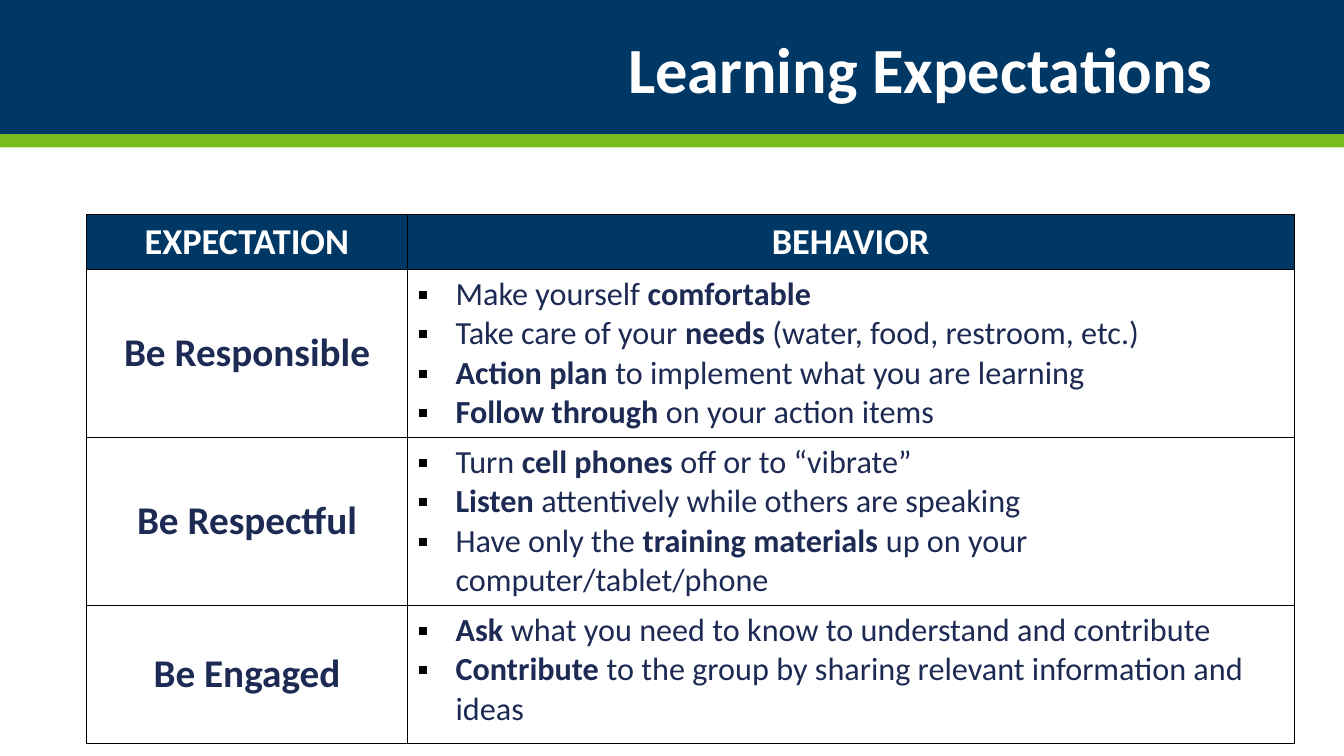
from lxml.etree import SubElement
from pptx import Presentation
from pptx.dml.color import RGBColor
from pptx.enum.shapes import MSO_SHAPE as Shape
from pptx.enum.text import MSO_ANCHOR as Anchor, PP_ALIGN as Align
from pptx.oxml import parse_xml
from pptx.oxml.ns import nsdecls, qn
from pptx.util import Inches, Pt

COLORS = {
    "navy": "003865",
    "green": "78BE21",
    "ink": "1D2A53",
    "white": "FFFFFF",
    "black": "000000",
}

EXPECTATIONS = {
    "Be Responsible": [
        "Make yourself **comfortable**",
        "Take care of your **needs** (water, food, restroom, etc.)",
        "**Action plan** to implement what you are learning",
        "**Follow through** on your action items",
    ],
    "Be Respectful": [
        "Turn **cell phones** off or to “vibrate”",
        "**Listen** attentively while others are speaking",
        "Have only the **training materials** up on your computer/tablet/phone",
    ],
    "Be Engaged": [
        "**Ask** what you need to know to understand and contribute",
        "**Contribute** to the group by sharing relevant information and ideas",
    ],
}


def color(name):
    return RGBColor.from_string(COLORS[name])


def write(frame, lines, size, ink, align=Align.LEFT, margin=0.38, indent=-0.38,
          bullet=None, spacing=None):
    for number, line in enumerate(lines):
        paragraph = frame.add_paragraph() if number else frame.paragraphs[0]
        paragraph.alignment = align
        if spacing:
            paragraph.line_spacing = spacing
        props = paragraph._p.get_or_add_pPr()
        props.set("marL", str(Inches(margin)))
        props.set("indent", str(Inches(indent)))
        if bullet:
            tint = SubElement(props, qn("a:buClr"))
            SubElement(tint, qn("a:srgbClr"), val=COLORS["black"])
            SubElement(props, qn("a:buFont"), typeface="Wingdings" if bullet == "§" else "Arial")
            SubElement(props, qn("a:buChar"), char=bullet)
        for part, text in enumerate(line.split("**")):
            if text:
                run = paragraph.add_run()
                run.text = text
                run.font.name = "Calibri"
                run.font.size = Pt(size)
                run.font.bold = part % 2 == 1
                run.font.color.rgb = color(ink)


class GridSlide:
    def __init__(self, deck, columns=100, rows=100):
        self.slide = deck.slides.add_slide(deck.slide_layouts[6])
        self.column = deck.slide_width / columns
        self.row = deck.slide_height / rows

    def place(self, left, top, width, height):
        return (round(left * self.column), round(top * self.row),
                round(width * self.column), round(height * self.row))

    def band(self, top, height, fill):
        band = self.slide.shapes.add_shape(Shape.RECTANGLE, *self.place(0, top, 100, height))
        band.shadow.inherit = False
        band.fill.solid()
        band.fill.fore_color.rgb = color(fill)
        band.line.fill.background()

    def title(self, text, *area):
        frame = self.slide.shapes.add_textbox(*self.place(*area)).text_frame
        frame.word_wrap = True
        frame.vertical_anchor = Anchor.MIDDLE
        write(frame, [f"**{text}**"], 46, "white", Align.CENTER, margin=4.5, indent=0.5,
              spacing=0.9)

    def cell(self, cell, lines, fill="white", anchor=Anchor.TOP, **style):
        cell.vertical_anchor = anchor
        cell.fill.solid()
        cell.fill.fore_color.rgb = color(fill)
        for position, side in enumerate("LRTB"):
            cell._tc.get_or_add_tcPr().insert(position, parse_xml(
                f'<a:ln{side} {nsdecls("a")} w="{Pt(1)}"><a:solidFill>'
                f'<a:srgbClr val="{COLORS["black"]}"/></a:solidFill></a:ln{side}>'))
        write(cell.text_frame, lines, **style)

    def table(self, left, top, widths, heights, headings, body):
        table = self.slide.shapes.add_table(
            len(heights), len(widths),
            *self.place(left, top, sum(widths), sum(heights))).table
        for column, width in zip(table.columns, widths):
            column.width = round(width * self.column)
        for row, height in zip(table.rows, heights):
            row.height = round(height * self.row)
        for number, heading in enumerate(headings):
            self.cell(table.cell(0, number), [f"**{heading}**"], "navy",
                      size=26, ink="white", align=Align.CENTER)
        for number, (expectation, behaviors) in enumerate(body.items(), 1):
            self.cell(table.cell(number, 0), [f"**{expectation}**"], anchor=Anchor.MIDDLE,
                      size=28, ink="ink", align=Align.CENTER)
            self.cell(table.cell(number, 1), behaviors, size=23, ink="ink",
                      indent=-0.4, bullet="▪")


def main():
    deck = Presentation()
    deck.slide_width, deck.slide_height = Inches(13.33), Inches(7.5)
    slide = GridSlide(deck)
    slide.band(0, 17.75, "navy")
    slide.band(17.75, 1.75, "green")
    slide.table(6.45, 28.4, [23.85, 66], [6.93, 18.27, 20.4, 18.27],
                ["EXPECTATION", "BEHAVIOR"], EXPECTATIONS)
    slide.title("Learning Expectations", 5.1, 5.07, 89.25, 9.07)
    deck.save("out.pptx")


if __name__ == "__main__":
    main()
